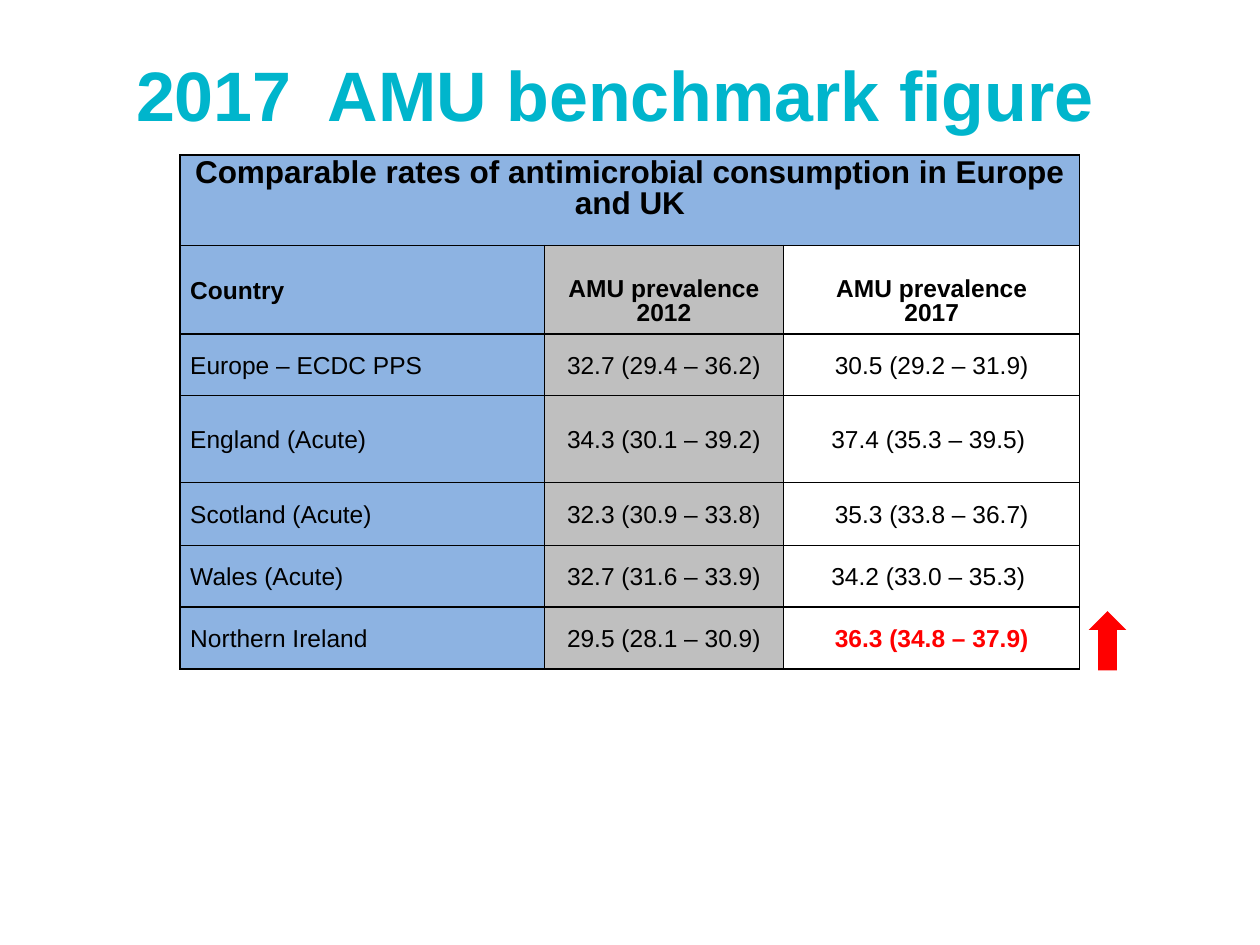
from lxml.etree import SubElement
from pptx import Presentation
from pptx.dml.color import RGBColor
from pptx.enum.shapes import MSO_SHAPE
from pptx.enum.text import MSO_ANCHOR as ANCHOR, MSO_AUTO_SIZE, PP_ALIGN as ALIGN
from pptx.oxml.ns import qn
from pptx.util import Inches, Pt

FONT = "Arial"
COLORS = {"title": "00B5CC", "text": "000000", "country": "8DB3E2",
          "earlier": "BFBFBF", "alert": "FF0000"}

TITLE = "2017  AMU benchmark figure"
CAPTION = "Comparable rates of antimicrobial consumption in Europe and UK"
HEADERS = ["Country", "AMU prevalence\n2012", "AMU prevalence\n2017"]
RATES = [
    ("Europe – ECDC PPS", "32.7 (29.4 – 36.2)", "30.5 (29.2 – 31.9)"),
    ("England (Acute)", "34.3 (30.1 – 39.2)", "37.4 (35.3 – 39.5) "),
    ("Scotland (Acute)", "32.3 (30.9 – 33.8)", "35.3 (33.8 – 36.7)"),
    ("Wales (Acute)", "32.7 (31.6 – 33.9)", "34.2 (33.0 – 35.3) "),
    ("Northern Ireland", "29.5 (28.1 – 30.9)", "36.3 (34.8 – 37.9)"),
]
COLUMN_FILLS = ["country", "earlier", None]
COLUMN_WIDTHS = [2.89, 1.9, 2.35]
ROW_HEIGHTS = [0.72, 0.7, 0.49, 0.69, 0.5, 0.49, 0.49]
TABLE_LEFT, TABLE_TOP = 1.43, 1.23


def color(name):
    return RGBColor.from_string(COLORS[name])


def add_run(paragraph, text, size, color_name="text", bold=False):
    run = paragraph.add_run()
    run.text = text
    run.font.name = FONT
    run.font.size = Pt(size)
    run.font.bold = bold
    run.font.color.rgb = color(color_name)


def add_borders(cell):
    properties = cell._tc.get_or_add_tcPr()
    for position, side in enumerate(("lnL", "lnR", "lnT", "lnB")):
        line = properties.makeelement(qn(f"a:{side}"), {"w": str(Pt(0.91))})
        fill = SubElement(line, qn("a:solidFill"))
        SubElement(fill, qn("a:srgbClr"), val=COLORS["text"])
        properties.insert(position, line)


def format_cell(cell, fill):
    cell.margin_left = cell.margin_right = Inches(0.08)
    cell.margin_top, cell.margin_bottom = Inches(0.04), 0
    if fill:
        cell.fill.solid()
        cell.fill.fore_color.rgb = color(fill)
    else:
        cell.fill.background()
    add_borders(cell)


def write_cell(cell, text, size, align, anchor, **style):
    cell.vertical_anchor = anchor
    frame = cell.text_frame
    for index, line in enumerate(text.split("\n")):
        paragraph = frame.add_paragraph() if index else frame.paragraphs[0]
        paragraph.alignment = align
        paragraph.line_spacing = 0.87
        add_run(paragraph, line, size, **style)


def add_title(slide):
    title = slide.shapes.title
    title.left, title.top = Inches(0.98), Inches(0.36)
    title.width, title.height = Inches(8.32), Inches(0.76)
    frame = title.text_frame
    frame.auto_size = MSO_AUTO_SIZE.NONE
    frame.vertical_anchor = ANCHOR.MIDDLE
    frame.paragraphs[0].alignment = ALIGN.LEFT
    add_run(frame.paragraphs[0], TITLE, 40, "title", True)


def add_rates_table(slide):
    table = slide.shapes.add_table(
        len(ROW_HEIGHTS), len(COLUMN_WIDTHS), Inches(TABLE_LEFT), Inches(TABLE_TOP),
        Inches(sum(COLUMN_WIDTHS)), Inches(sum(ROW_HEIGHTS))).table
    table.first_row = table.horz_banding = False
    for column, width in zip(table.columns, COLUMN_WIDTHS):
        column.width = Inches(width)
    for row, height in zip(table.rows, ROW_HEIGHTS):
        row.height = Inches(height)

    for column in range(len(COLUMN_WIDTHS)):
        format_cell(table.cell(0, column), "country")
    caption = table.cell(0, 0)
    caption.merge(table.cell(0, len(COLUMN_WIDTHS) - 1))
    caption.margin_top = Inches(0.03)
    write_cell(caption, CAPTION, 18, ALIGN.CENTER, ANCHOR.TOP, bold=True)

    last_row = len(ROW_HEIGHTS) - 1
    for row, values in enumerate([HEADERS, *RATES], start=1):
        for column, text in enumerate(values):
            cell = table.cell(row, column)
            format_cell(cell, COLUMN_FILLS[column])
            is_header = row == 1
            is_alert = (row, column) == (last_row, 2)
            anchor = ANCHOR.MIDDLE
            if is_header and column:
                anchor = ANCHOR.BOTTOM
                cell.margin_bottom = Inches(0.06)
            write_cell(cell, text, 14, ALIGN.CENTER if column else ALIGN.LEFT, anchor,
                       color_name="alert" if is_alert else "text",
                       bold=is_header or is_alert)


def add_rise_arrow(slide):
    height = 0.47
    table_right = TABLE_LEFT + sum(COLUMN_WIDTHS)
    table_bottom = TABLE_TOP + sum(ROW_HEIGHTS)
    arrow = slide.shapes.add_shape(
        MSO_SHAPE.UP_ARROW, Inches(table_right + 0.07), Inches(table_bottom - height + 0.01),
        Inches(0.3), Inches(height))
    arrow.shadow.inherit = False
    arrow.fill.solid()
    arrow.fill.fore_color.rgb = color("alert")
    arrow.line.fill.background()


def main():
    presentation = Presentation()
    presentation.slide_width, presentation.slide_height = Inches(10), Inches(7.5)
    slide = presentation.slides.add_slide(presentation.slide_layouts[5])
    add_title(slide)
    add_rates_table(slide)
    add_rise_arrow(slide)
    presentation.save("out.pptx")


if __name__ == "__main__":
    main()
